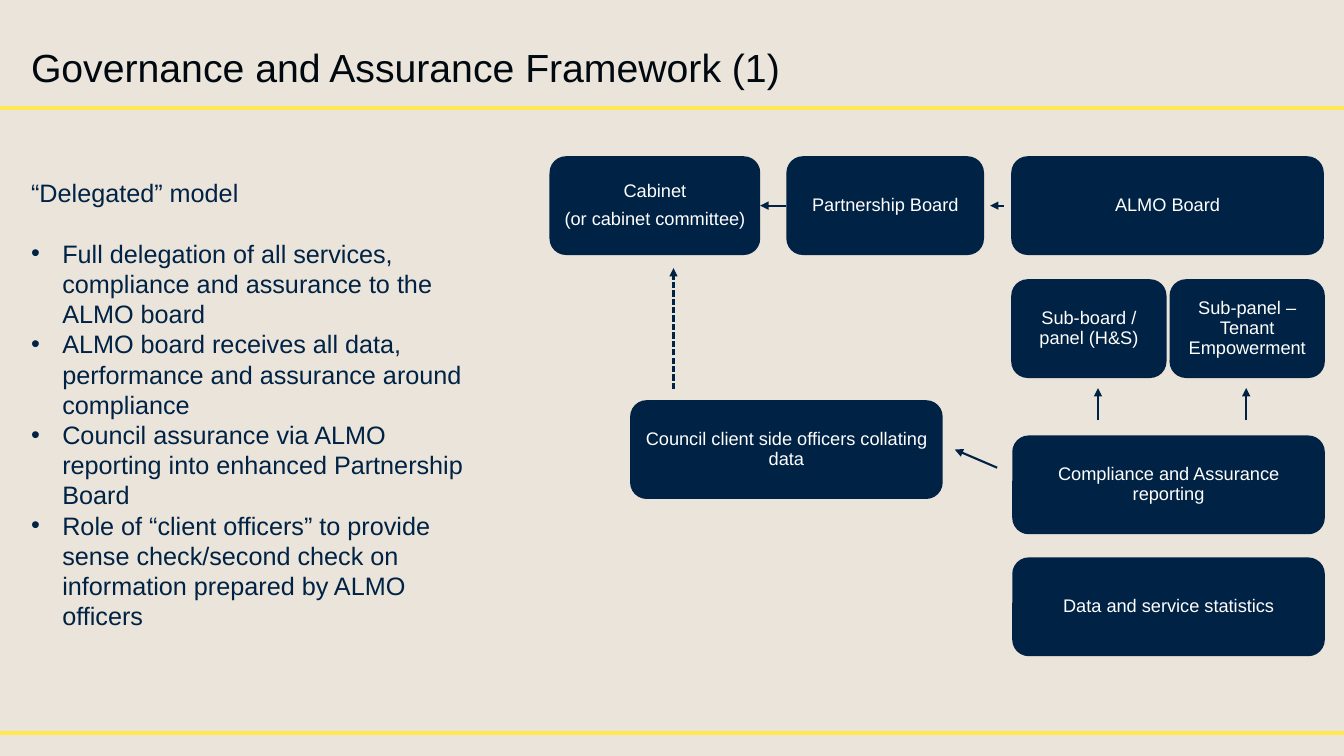
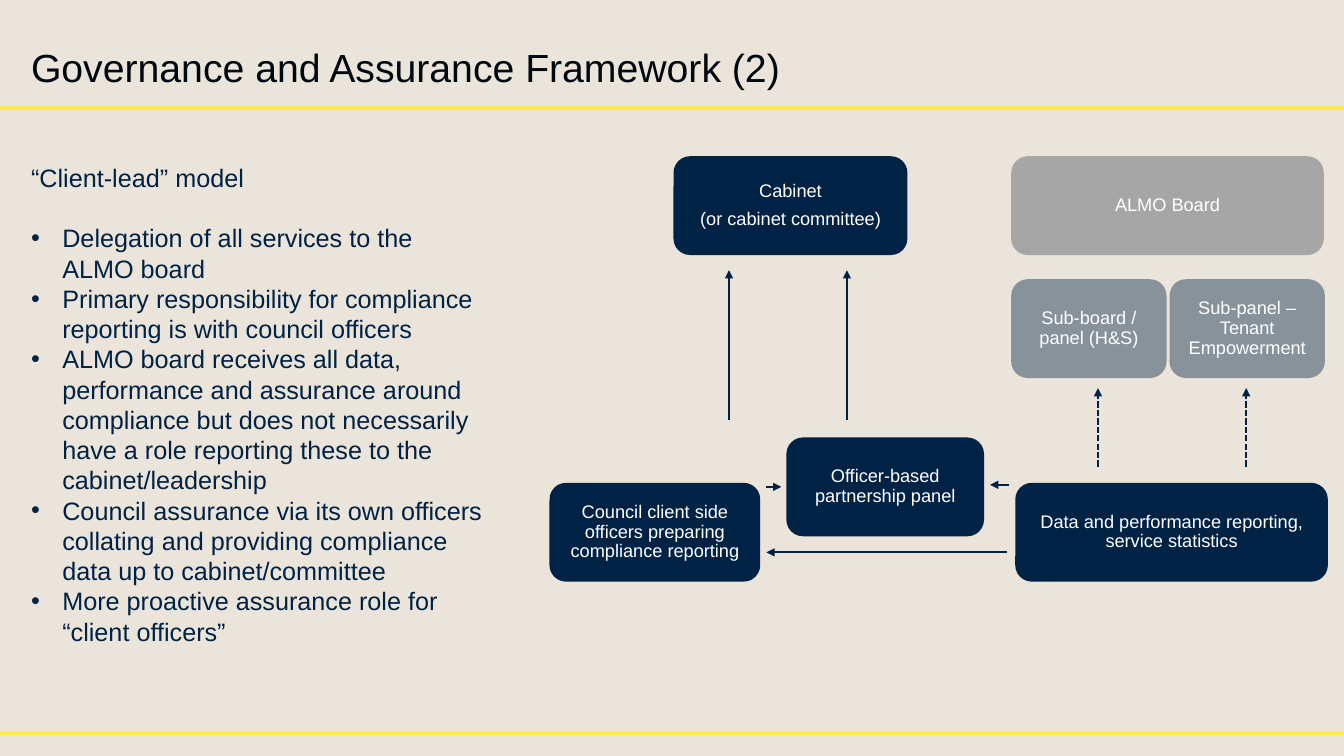
from pptx import Presentation
from pptx import util as u
from pptx.dml.color import RGBColor
from pptx.enum import dml, shapes, text
from pptx.oxml.ns import qn
from lxml import etree

BACKGROUND, YELLOW, TITLE = "EAE4DA", "FFE850", "000810"
NAVY, GREY, WHITE = "002244", "A6A6A6", "FFFFFF"
FONT = "Arial"
TOP_ROW, SUB_ROW, BOX_HEIGHT = 1.55, 2.77, 0.98
ALMO_LEFT, ALMO_WIDTH, SUB_WIDTH, SUB_STEP = 10.03, 3.1, 1.54, 1.57
PARTNER_LEFT, PARTNER_WIDTH = 7.8, 1.96
COUNCIL_LEFT, COUNCIL_WIDTH = 5.45, 2.09
REPORT_XS = (10.89, 12.36)
CABINET = "Cabinet\n(or cabinet committee)"


def color(value):
    return RGBColor.from_string(value)


class Deck:
    def __init__(self):
        self.presentation = Presentation()
        self.presentation.slide_width = u.Inches(13.33)
        self.presentation.slide_height = u.Inches(7.5)
        fill = self.presentation.slide_master.background.fill
        fill.solid()
        fill.fore_color.rgb = color(BACKGROUND)
        self.slide = None

    def add_slide(self, title):
        self.slide = self.presentation.slides.add_slide(self.presentation.slide_layouts[6])
        for y in (7.27, 1.07):
            self.line((0, y), (13.33, y), YELLOW, 3)
        frame = self.text_box(0.21, 0.45, 12.24, 0.5, text.MSO_ANCHOR.BOTTOM)
        frame.text = title
        frame.paragraphs[0].line_spacing = 0.9
        self.style(frame.paragraphs[0], 28, TITLE)

    def style(self, paragraph, size, ink):
        for run in paragraph.runs:
            run.font.name = FONT
            run.font.size = u.Pt(size)
            run.font.color.rgb = color(ink)

    def text_box(self, left, top, width, height, anchor):
        box = self.slide.shapes.add_textbox(*map(u.Inches, (left, top, width, height)))
        box.text_frame.word_wrap = True
        box.text_frame.vertical_anchor = anchor
        return box.text_frame

    def model(self, heading, points):
        frame = self.text_box(0.21, 1.44, 4.69, 5.14, text.MSO_ANCHOR.MIDDLE)
        frame.text = "\n".join([heading, *points])
        frame.paragraphs[0].space_after = u.Pt(21.6)
        for paragraph in frame.paragraphs[1:]:
            properties = paragraph._p.get_or_add_pPr()
            properties.set("marL", str(u.Inches(0.31)))
            properties.set("indent", str(u.Inches(-0.31)))
            etree.SubElement(properties, qn("a:buFont"), typeface=FONT)
            etree.SubElement(properties, qn("a:buChar"), char="•")
        for paragraph in frame.paragraphs:
            self.style(paragraph, 18, NAVY)

    def box(self, label, left, top, width, fill=NAVY, opacity=100):
        shape = self.slide.shapes.add_shape(
            shapes.MSO_SHAPE.ROUNDED_RECTANGLE,
            *map(u.Inches, (left, top, width, BOX_HEIGHT)))
        shape.shadow.inherit = False
        shape.line.fill.background()
        shape.fill.solid()
        shape.fill.fore_color.rgb = color(fill)
        if opacity < 100:
            fill_color = next(shape.element.spPr.iter(qn("a:srgbClr")))
            etree.SubElement(fill_color, qn("a:alpha"), val=str(opacity * 1000))
        frame = shape.text_frame
        frame.word_wrap = True
        frame.margin_left = frame.margin_right = u.Inches(0.05)
        frame.vertical_anchor = text.MSO_ANCHOR.MIDDLE
        frame.text = label
        for paragraph in frame.paragraphs:
            paragraph.alignment = text.PP_ALIGN.CENTER
            paragraph.line_spacing = 0.9
            paragraph.space_after = u.Pt(6)
            self.style(paragraph, 13, WHITE)

    def line(self, start, end, ink, width):
        connector = self.slide.shapes.add_connector(
            shapes.MSO_CONNECTOR.STRAIGHT, *map(u.Inches, (*start, *end)))
        connector.line.color.rgb = color(ink)
        connector.line.width = u.Pt(width)
        etree.SubElement(connector.element.spPr, qn("a:effectLst"))
        return connector

    def arrow(self, start, end, dashed=False):
        connector = self.line(start, end, NAVY, 1.5)
        if dashed:
            connector.line.dash_style = dml.MSO_LINE.SQUARE_DOT
        outline = connector.element.spPr.find(qn("a:ln"))
        etree.SubElement(outline, qn("a:tailEnd"), type="triangle")

    def almo_boards(self, board_fill, panel_opacity):
        self.box("ALMO Board", ALMO_LEFT, TOP_ROW, ALMO_WIDTH, board_fill)
        panels = ("Sub-board / panel (H&S)", "Sub-panel – Tenant Empowerment")
        for index, label in enumerate(panels):
            self.box(label, ALMO_LEFT + index * SUB_STEP, SUB_ROW, SUB_WIDTH,
                     opacity=panel_opacity)

    def report_arrows(self, bottom, dashed=False):
        for x in REPORT_XS:
            self.arrow((x, bottom), (x, 3.85), dashed)


def delegated_slide(deck):
    deck.add_slide("Governance and Assurance Framework (1)")
    deck.model("“Delegated” model", [
        "Full delegation of all services, compliance and assurance to the ALMO board",
        "ALMO board receives all data, performance and assurance around compliance",
        "Council assurance via ALMO reporting into enhanced Partnership Board",
        "Role of “client officers” to provide sense check/second check on "
        "information prepared by ALMO officers",
    ])
    deck.almo_boards(NAVY, 100)
    deck.box("Compliance and Assurance reporting", 10.04, 4.32, ALMO_WIDTH)
    deck.box("Data and service statistics", 10.04, 5.53, ALMO_WIDTH)
    deck.box(CABINET, COUNCIL_LEFT, TOP_ROW, COUNCIL_WIDTH)
    deck.box("Council client side officers collating data", 6.25, 3.97, ALMO_WIDTH)
    deck.box("Partnership Board", PARTNER_LEFT, TOP_ROW, PARTNER_WIDTH)
    deck.report_arrows(4.17)
    deck.arrow((9.89, 4.64), (9.47, 4.46))
    deck.arrow((6.68, 3.86), (6.68, 2.66), dashed=True)
    deck.arrow((9.96, 2.04), (9.82, 2.04))
    deck.arrow((7.8, 2.04), (7.54, 2.04))


def client_lead_slide(deck):
    deck.add_slide("Governance and Assurance Framework (2)")
    deck.model("“Client-lead” model", [
        "Delegation of all services to the ALMO board",
        "Primary responsibility for compliance reporting is with council officers",
        "ALMO board receives all data, performance and assurance around compliance "
        "but does not necessarily have a role reporting these to the cabinet/leadership",
        "Council assurance via its own officers collating and providing compliance "
        "data up to cabinet/committee",
        "More proactive assurance role for “client officers”",
    ])
    deck.almo_boards(GREY, 42)
    deck.box("Data and performance reporting, service statistics", 10.07, 4.79, ALMO_WIDTH)
    deck.box(CABINET, 6.68, TOP_ROW, 2.32)
    deck.box("Council client side officers preparing compliance reporting",
             COUNCIL_LEFT, 4.79, COUNCIL_WIDTH)
    deck.box("Officer-based partnership panel", PARTNER_LEFT, 4.34, PARTNER_WIDTH)
    deck.report_arrows(4.63, dashed=True)
    for x in (7.23, 8.4):
        deck.arrow((x, 4.17), (x, 2.68))
    deck.arrow((10.01, 4.81), (9.82, 4.81))
    deck.arrow((7.6, 4.83), (7.75, 4.83))
    deck.arrow((9.99, 5.48), (7.6, 5.48))


def main():
    deck = Deck()
    delegated_slide(deck)
    client_lead_slide(deck)
    deck.presentation.save("out.pptx")


if __name__ == "__main__":
    main()
